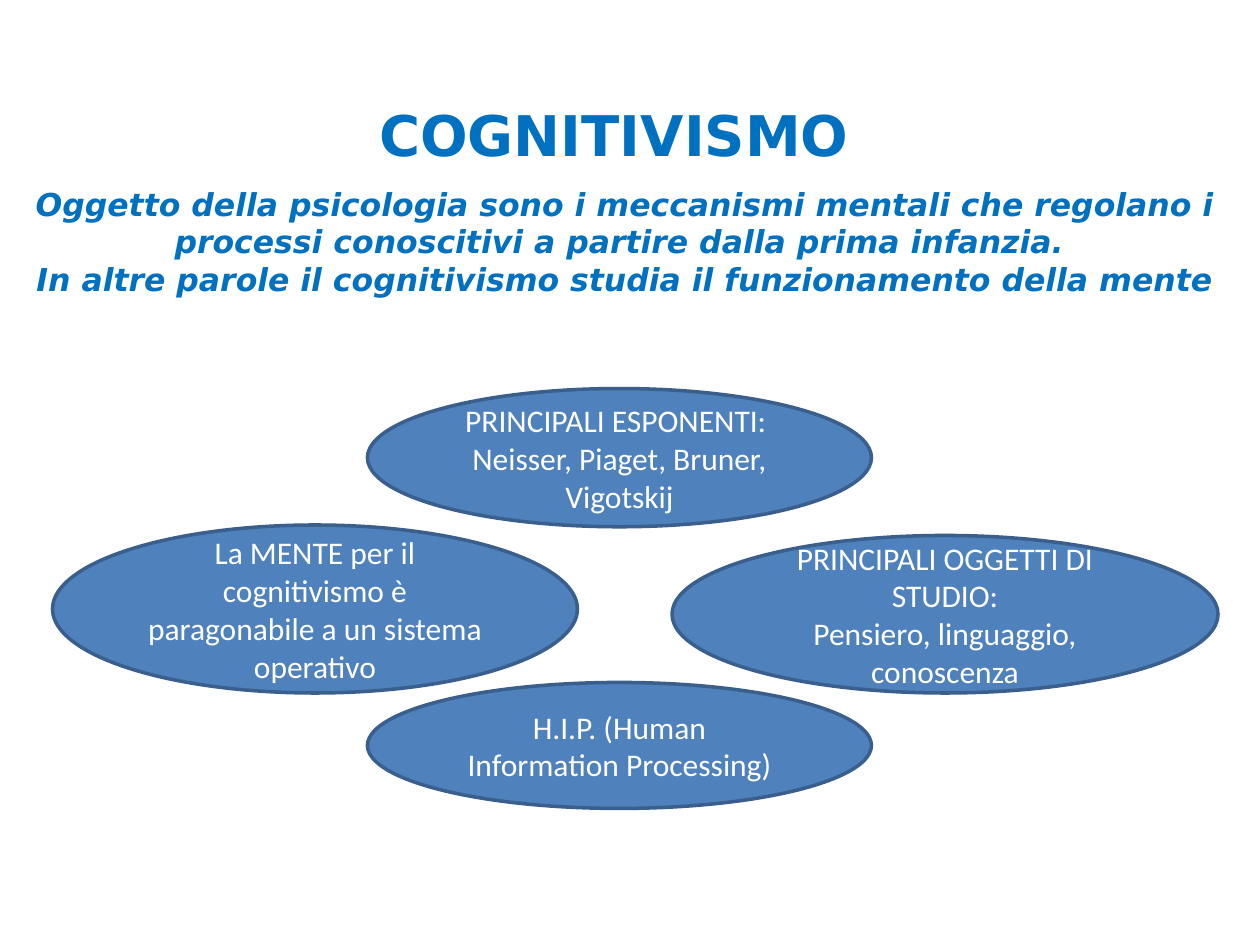
"""Build a slide that sums up cognitivism with four ellipses."""
from dataclasses import dataclass

from pptx import Presentation
from pptx.dml.color import RGBColor
from pptx.enum.shapes import MSO_SHAPE as Preset
from pptx.enum.text import MSO_ANCHOR as Anchor, MSO_AUTO_SIZE as AutoSize, PP_ALIGN as Align
from pptx.slide import Slide
from pptx.text.text import TextFrame
from pptx.util import Pt

HEADING_BLUE = RGBColor(0x00, 0x70, 0xC0)
ELLIPSE_FILL = RGBColor(0x4F, 0x81, 0xBD)
ELLIPSE_LINE = RGBColor(0x3A, 0x5F, 0x8C)
WHITE = RGBColor(0xFF, 0xFF, 0xFF)
HEADING_FONT = "DejaVu Sans"
ELLIPSE_FONT = "Calibri"


@dataclass
class Concept:
    left: float
    top: float
    width: float
    height: float
    lines: list[str]


CONCEPTS = [
    Concept(210, 222, 288, 79, ["PRINCIPALI ESPONENTI: ", "Neisser, Piaget, Bruner, Vigotskij"]),
    Concept(384, 306, 312, 90, ["PRINCIPALI OGGETTI DI STUDIO:", "Pensiero, linguaggio, conoscenza"]),
    Concept(30, 300, 300, 96, ["La MENTE per il cognitivismo è paragonabile a un sistema operativo"]),
    Concept(210, 390, 288, 72, ["H.I.P. (Human Information Processing)"]),
]
DEFINITION = [
    "Oggetto della psicologia sono i meccanismi mentali che regolano i processi "
    "conoscitivi a partire dalla prima infanzia. ",
    "In altre parole il cognitivismo studia il funzionamento della mente",
]


def write_lines(frame: TextFrame, lines: list[str], font_name: str, size: float, color: RGBColor,
                anchor: Anchor = Anchor.TOP, bold: bool = False, italic: bool = False) -> None:
    """Fill a text frame with centred paragraphs in one style."""
    frame.word_wrap = True
    frame.auto_size = AutoSize.NONE
    frame.vertical_anchor = anchor
    frame.text = "\n".join(lines)
    for paragraph in frame.paragraphs:
        paragraph.alignment = Align.CENTER
        font = paragraph.font
        font.name, font.size = font_name, Pt(size)
        font.bold, font.italic = bold, italic
        font.color.rgb = color


def add_title(slide: Slide) -> None:
    """Place and format the title."""
    title = slide.shapes.title
    title.left, title.top, title.width, title.height = Pt(168), Pt(54), Pt(366), Pt(46)
    write_lines(title.text_frame, ["COGNITIVISMO"], HEADING_FONT, 32, HEADING_BLUE, bold=True)


def add_definition(slide: Slide) -> None:
    """Add the definition below the title."""
    box = slide.shapes.add_textbox(Pt(6), Pt(102), Pt(702), Pt(73))
    write_lines(box.text_frame, DEFINITION, HEADING_FONT, 18, HEADING_BLUE, bold=True, italic=True)


def add_concept(slide: Slide, concept: Concept) -> None:
    """Draw one ellipse with its text."""
    ellipse = slide.shapes.add_shape(
        Preset.OVAL, Pt(concept.left), Pt(concept.top), Pt(concept.width), Pt(concept.height))
    ellipse.shadow.inherit = False
    ellipse.fill.solid()
    ellipse.fill.fore_color.rgb = ELLIPSE_FILL
    ellipse.line.color.rgb = ELLIPSE_LINE
    ellipse.line.width = Pt(2)
    write_lines(ellipse.text_frame, concept.lines, ELLIPSE_FONT, 18, WHITE, Anchor.MIDDLE)


def main() -> None:
    """Create and save the presentation."""
    presentation = Presentation()
    presentation.slide_width, presentation.slide_height = Pt(720), Pt(540)
    slide = presentation.slides.add_slide(presentation.slide_layouts.get_by_name("Title Only"))
    add_title(slide)
    add_definition(slide)
    for concept in CONCEPTS:
        add_concept(slide, concept)
    presentation.save("out.pptx")


if __name__ == "__main__":
    main()
